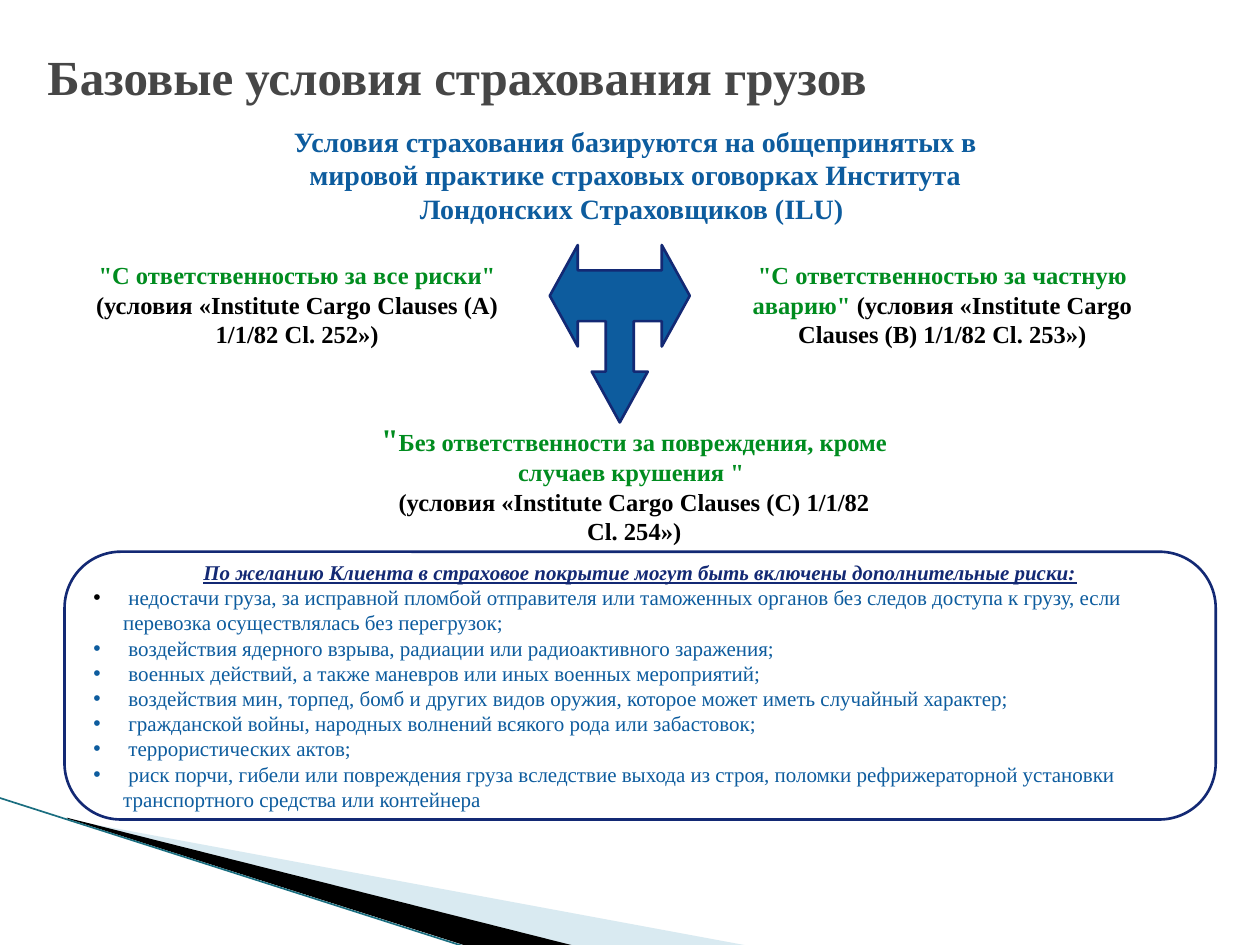
from lxml import etree
from pptx import Presentation
from pptx import util as u
from pptx.dml.color import RGBColor
from pptx.enum import shapes, text
from pptx.oxml.ns import qn

BLUE, NAVY, GREEN, BLACK = "0D5C9E", "132974", "008C1F", "000000"


def rgb(value):
    return RGBColor.from_string(value)


class Deck:
    font = "Times New Roman"

    def __init__(self, prs):
        self.s = prs.slides.add_slide(prs.slide_layouts[6])

    def paint(self, sp, fill=None, line=None, alpha=None):
        sp.shadow.inherit = False
        if fill:
            sp.fill.solid()
            sp.fill.fore_color.rgb = rgb(fill)
            if alpha:
                clr = sp._element.spPr.find(qn("a:solidFill"))[0]
                etree.SubElement(clr, qn("a:alpha")).set("val", str(alpha * 1000))
        else:
            sp.fill.background()
        if line:
            sp.line.color.rgb = rgb(line)
            sp.line.width = u.Pt(1.5)
        else:
            sp.line.fill.background()

    def polygon(self, points, **style):
        pts = [(u.Pt(x), u.Pt(y)) for x, y in points]
        fb = self.s.shapes.build_freeform(*pts[0], scale=1.0)
        fb.add_line_segments(pts[1:], close=True)
        self.paint(fb.convert_to_shape(), **style)

    def line(self, x1, y1, x2, y2, color, width):
        c = self.s.shapes.add_connector(
            shapes.MSO_CONNECTOR.STRAIGHT, u.Pt(x1), u.Pt(y1), u.Pt(x2), u.Pt(y2))
        c.line.color.rgb = rgb(color)
        c.line.width = u.Pt(width)
        etree.SubElement(c._element.spPr, qn("a:effectLst"))

    def paragraph(self, p, runs, size, align, bold=True, accent=False):
        p.alignment = align
        for content, color, *own_size in runs:
            r = p.add_run()
            r.text = content
            f = r.font
            f.name, f.bold = self.font, bold
            f.size = u.Pt(own_size[0] if own_size else size)
            f.color.rgb = rgb(color)
            if accent:
                f.italic = f.underline = True

    def frame(self, sp):
        tf = sp.text_frame
        tf.word_wrap = True
        tf.vertical_anchor = text.MSO_ANCHOR.MIDDLE
        return tf

    def label(self, box, paragraphs, size, align=text.PP_ALIGN.CENTER):
        tf = self.frame(self.s.shapes.add_textbox(*map(u.Pt, box)))
        for i, runs in enumerate(paragraphs):
            p = tf.add_paragraph() if i else tf.paragraphs[0]
            self.paragraph(p, runs, size, align)

    def panel(self, box, heading, items, size):
        sp = self.s.shapes.add_shape(
            shapes.MSO_SHAPE.ROUNDED_RECTANGLE, *map(u.Pt, box))
        sp.adjustments[0] = 0.21
        self.paint(sp, line=NAVY)
        tf = self.frame(sp)
        self.paragraph(tf.paragraphs[0], [(heading, NAVY)], size,
                       text.PP_ALIGN.CENTER, accent=True)
        for runs in items:
            p = tf.add_paragraph()
            pPr = p._p.get_or_add_pPr()
            pPr.set("marL", str(u.Pt(17)))
            pPr.set("indent", str(u.Pt(-17)))
            etree.SubElement(pPr, qn("a:buFont")).set("typeface", "Arial")
            etree.SubElement(pPr, qn("a:buChar")).set("char", "•")
            self.paragraph(p, runs, size, text.PP_ALIGN.LEFT, bold=False)


def main():
    prs = Presentation()
    prs.slide_width, prs.slide_height = u.Pt(720), u.Pt(540)
    d = Deck(prs)

    d.polygon([(39.6, 468.5), (428, 540.5), (328, 540.5), (39.6, 468)],
              fill="A0CBDC", alpha=40)
    d.polygon([(38.2, 467.3), (329, 540.7), (268, 541), (38.9, 468)], fill=BLACK)
    d.line(-0.7, 455.8, 267, 541.4, "1A6E80", 0.95)

    d.label((20, 21, 680, 45), [[("Базовые условия страхования грузов", "464646")]],
            28, text.PP_ALIGN.LEFT)
    d.label((139, 71.3, 448, 57),
            [[("Условия страхования базируются на общепринятых в мировой практике "
               "страховых оговорках Института Лондонских Страховщиков (ILU) ", BLUE)]], 16)

    clauses = [
        (36.7, "все риски\"", "A", 252),
        (405.4, "частную аварию\"", "B", 253),
    ]
    for x, risk, letter, number in clauses:
        d.label((x, 151.2, 266.4, 45.4),
                [[("\"С ответственностью за " + risk, GREEN),
                  (f" (условия «Institute Cargo Clauses ({letter}) 1/1/82 Cl.\u00a0{number}»)",
                   BLACK)]], 14)
    d.label((206.6, 242, 311.8, 67.7),
            [[("\"", GREEN, 18),
              ("Без ответственности за повреждения, кроме случаев крушения \" ", GREEN)],
             [("(условия «Institute Cargo Clauses (C) 1/1/82 Cl.\u00a0254»)", BLACK)]], 14)

    center = 354.2
    half = [(0, 241.4), (16, 212.4), (8, 212.4), (8, 183.5), (24, 183.5),
            (24, 198), (40, 169), (24, 140), (24, 154.5)]
    d.polygon([(center + x, y) for x, y in half]
              + [(center - x, y) for x, y in half[:0:-1]], fill=BLUE, line=NAVY)

    risks = [
        "воздействия ядерного взрыва, радиации или радиоактивного заражения;",
        "военных действий, а также маневров или иных военных мероприятий;",
        "воздействия мин, торпед, бомб и других видов оружия, которое может иметь "
        "случайный характер;",
        "гражданской войны, народных волнений всякого рода или забастовок;",
        "террористических актов;",
        "риск порчи, гибели или повреждения груза вследствие выхода из строя, поломки "
        "рефрижераторной установки транспортного средства или контейнера",
    ]
    shortage = ("недостачи груза, за исправной пломбой отправителя или таможенных органов "
                "без следов доступа к грузу, если перевозка осуществлялась без перегрузок;")
    d.panel((36.9, 315.3, 657.8, 153),
            "По желанию Клиента в страховое покрытие могут быть включены дополнительные риски:",
            [[(" ", BLACK), (shortage, BLUE)]] + [[(" " + r, BLUE)] for r in risks], 12)

    prs.save("out.pptx")


if __name__ == "__main__":
    main()
